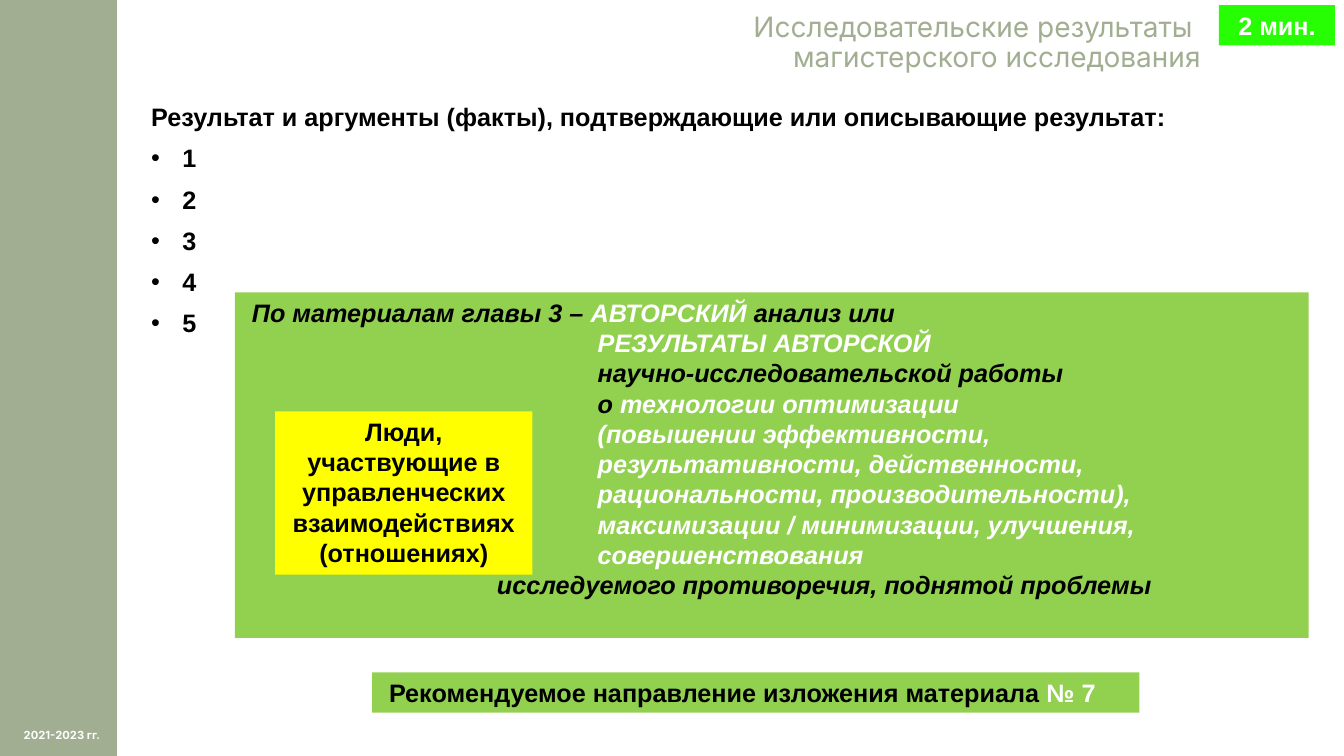
from pptx import Presentation
from pptx.dml.color import RGBColor
from pptx.enum.shapes import MSO_SHAPE
from pptx.enum.text import MSO_ANCHOR, MSO_AUTO_SIZE, PP_ALIGN
from pptx.oxml.ns import qn
from pptx.util import Inches, Pt
from lxml.etree import SubElement

SAGE, GREEN, YELLOW, LIME = "A2AE91", "92D050", "FFFF00", "27FD03"
BLACK, WHITE = "000000", "FFFFFF"


def color(hex_value):
    return RGBColor.from_string(hex_value)


class SlideBuilder:
    text_style = {"name": "Arial", "size": Pt(18), "bold": True, "italic": False}

    def __init__(self, slide):
        self.slide = slide

    def place(self, box, left, top, width, height):
        bounds = {"left": left, "top": top, "width": width, "height": height}
        for name, value in bounds.items():
            setattr(box, name, Inches(value))

    def indent(self, para, margin, first_line=0, bullet=None):
        """Set the left margin and the bullet of a paragraph."""
        properties = para._p.get_or_add_pPr()
        properties.set("marL", str(Inches(margin)))
        properties.set("indent", str(Inches(first_line)))
        if bullet:
            SubElement(properties, qn("a:buFont")).set("typeface", "Arial")
            SubElement(properties, qn("a:buChar")).set("char", bullet)
        else:
            SubElement(properties, qn("a:buNone"))

    def fill_text(self, box, paragraphs, anchor=MSO_ANCHOR.TOP, inset=None, **style):
        """Fill a box; each paragraph is (spans, indent, format), each span (text, colour)."""
        frame = box.text_frame
        frame.word_wrap = True
        frame.auto_size = MSO_AUTO_SIZE.NONE
        frame.vertical_anchor = anchor
        if inset is not None:
            for side in ("left", "top", "right", "bottom"):
                setattr(frame, f"margin_{side}", Inches(inset))
        for index, (spans, indent, para_format) in enumerate(paragraphs):
            para = frame.add_paragraph() if index else frame.paragraphs[0]
            for name, value in para_format.items():
                setattr(para, name, value)
            para.space_before = para_format.get("space_before", Pt(0)) if index else Pt(0)
            self.indent(para, **indent)
            for text, span_color in spans:
                span = para.add_run()
                span.text = text
                for name, value in {**self.text_style, **style}.items():
                    setattr(span.font, name, value)
                span.font.color.rgb = color(span_color)

    def placeholder(self, index, bounds, paragraphs, **options):
        box = self.slide.placeholders[index]
        self.place(box, *bounds)
        self.fill_text(box, paragraphs, **options)

    def rectangle(self, bounds, fill, paragraphs=(), **options):
        box = self.slide.shapes.add_shape(MSO_SHAPE.RECTANGLE, *map(Inches, bounds))
        box.shadow.inherit = False
        box.fill.solid()
        box.fill.fore_color.rgb = color(fill)
        box.line.fill.background()
        self.fill_text(box, paragraphs, **options)

    def label(self, bounds, paragraphs, **options):
        box = self.slide.shapes.add_textbox(*map(Inches, bounds))
        self.fill_text(box, paragraphs, **options)


def paragraph(*spans, margin=0, first_line=0, bullet=None, **para_format):
    """Describe a paragraph by its spans, indent and format values."""
    indent = {"margin": margin, "first_line": first_line, "bullet": bullet}
    para_format.setdefault("alignment", PP_ALIGN.LEFT)
    return spans, indent, para_format


def centered(text, text_color):
    return [paragraph((text, text_color), alignment=PP_ALIGN.CENTER)]


def main():
    deck = Presentation()
    deck.slide_width, deck.slide_height = Inches(13.33), Inches(7.5)
    builder = SlideBuilder(deck.slides.add_slide(deck.slide_layouts[1]))

    builder.rectangle((0, 0, 1.16, 7.5), SAGE)
    builder.label((0.07, 7.09, 1.09, 0.41), centered("2021-2023 гг.", WHITE),
                  anchor=MSO_ANCHOR.MIDDLE, name="Inter", size=Pt(8))

    title_lines = ("Исследовательские результаты ", "магистерского исследования")
    builder.placeholder(
        0, (1.25, 0.13, 10.66, 0.7),
        [paragraph((line, SAGE), alignment=PP_ALIGN.RIGHT, line_spacing=0.9)
         for line in title_lines],
        inset=0, name="Inter", size=Pt(20), bold=False)

    spacing = {"line_spacing": 0.9, "space_before": Pt(10)}
    heading = "Результат и аргументы (факты), подтверждающие или описывающие результат:"
    results = [paragraph((str(number), BLACK), margin=0.31, first_line=-0.31,
                         bullet="•", **spacing) for number in range(1, 6)]
    builder.placeholder(1, (1.4, 0.99, 11.66, 5.81),
                        [paragraph((heading, BLACK), **spacing), *results])

    topic_lines = [
        [("РЕЗУЛЬТАТЫ АВТОРСКОЙ", WHITE)],
        [("научно-исследовательской работы", BLACK)],
        [("о ", BLACK), ("технологии оптимизации", WHITE)],
        [("(повышении эффективности,", WHITE)],
        [("результативности, действенности,", WHITE)],
        [("рациональности, производительности),", WHITE)],
        [("максимизации / минимизации, улучшения,", WHITE)],
        [("совершенствования", WHITE)],
    ]
    builder.rectangle((2.33, 2.9, 10.65, 3.43), GREEN, [
        paragraph(("По материалам главы 3 – ", BLACK), ("АВТОРСКИЙ", WHITE),
                  (" анализ или", BLACK), margin=0.07),
        *[paragraph(*spans, margin=3.5) for spans in topic_lines],
        paragraph(("исследуемого противоречия, поднятой проблемы", BLACK), margin=2.5),
    ], italic=True)

    people = "Люди, участвующие в управленческих взаимодействиях (отношениях)"
    builder.rectangle((2.73, 4.08, 2.55, 1.62), YELLOW, centered(people, BLACK))
    builder.rectangle((12.09, 0.05, 1.15, 0.4), LIME, centered("2 мин.", WHITE))
    builder.rectangle((3.69, 6.67, 7.61, 0.4), GREEN, [
        paragraph(("Рекомендуемое направление изложения материала ", BLACK),
                  ("№ 7", WHITE), margin=0.07)])

    deck.save("out.pptx")


if __name__ == "__main__":
    main()
